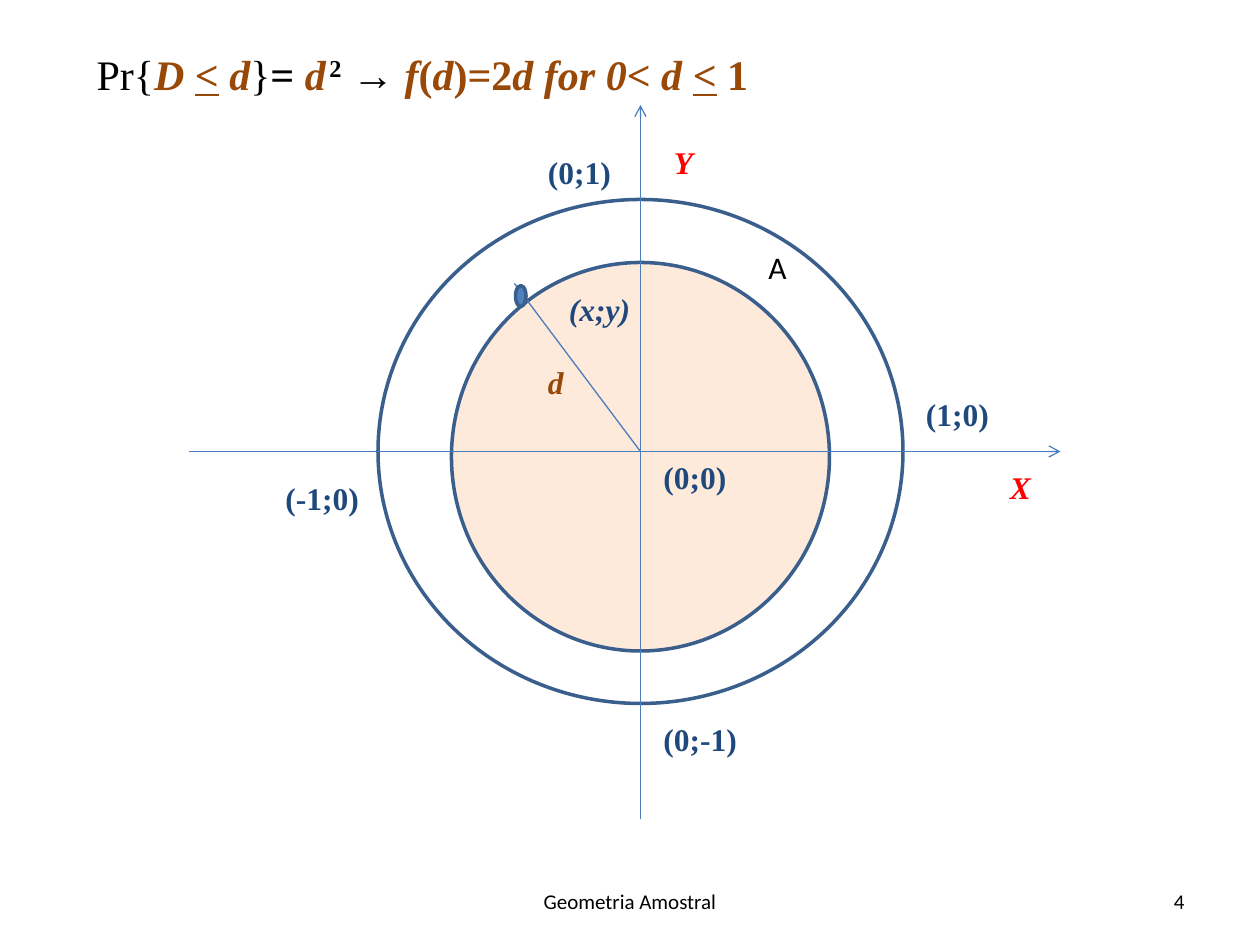
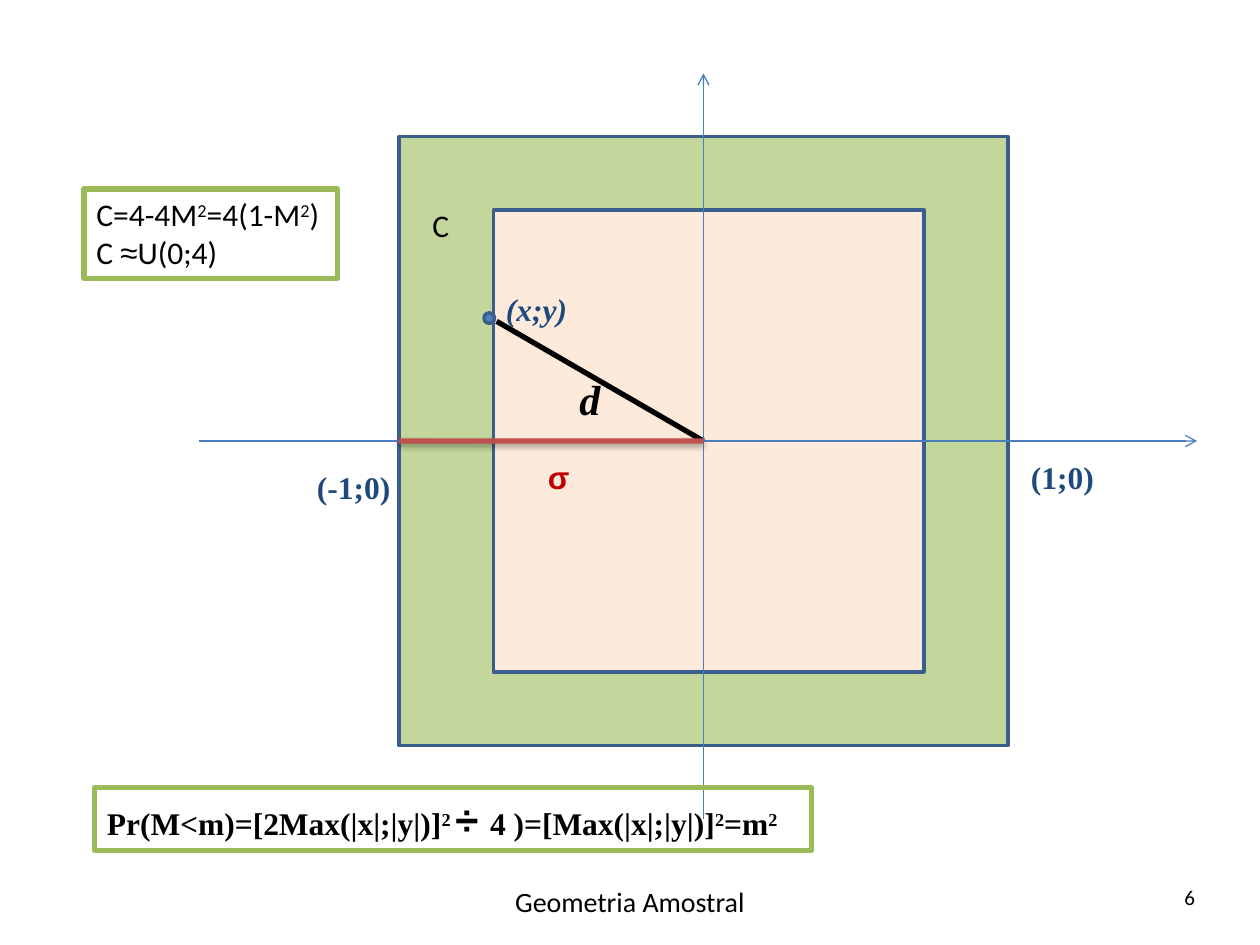
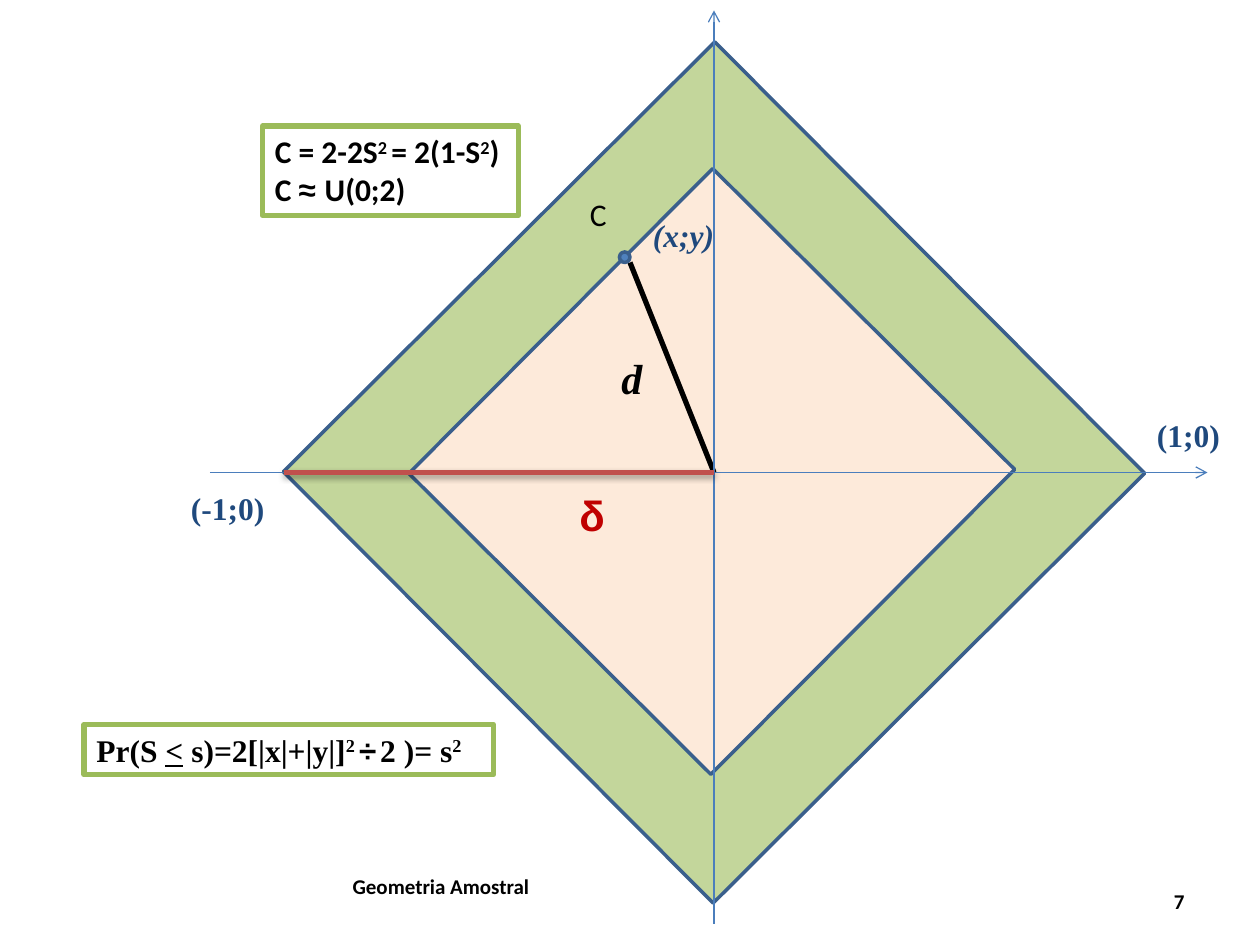
"""Build three slides on sample geometry: a disc, a square and a diamond."""
from lxml.etree import SubElement
from pptx import Presentation
from pptx.dml.color import RGBColor as RGB
from pptx.enum.shapes import MSO_CONNECTOR as CONNECTOR, MSO_SHAPE as SHAPE
from pptx.enum.text import MSO_ANCHOR as ANCHOR, MSO_AUTO_SIZE as AUTO_SIZE, PP_ALIGN as ALIGN
from pptx.oxml.ns import qn
from pptx.util import Inches, Pt

SERIF, SANS, SYMBOL = "Times New Roman", "Calibri", "Arial"
THEME = {
    "colors": {
        "black": "000000", "navy": "1F497D", "brown": "984807", "red": "FF0000",
        "crimson": "C00000", "peach": "FDEADA", "green": "C3D69B", "dot": "4F81BD",
        "outline": "3A5F8C", "axis": "4B7EBC", "frame": "9BBB59", "segment": "C0504D",
    },
    "styles": {
        "title": {"name": SERIF, "size": 24, "color": "black"},
        "point": {"name": SERIF, "size": 18, "color": "navy", "bold": True},
        "sample": {"name": SERIF, "size": 18, "color": "navy", "bold": True, "italic": True},
        "axis": {"name": SERIF, "size": 18, "color": "red", "bold": True, "italic": True},
        "brown d": {"name": SERIF, "size": 18, "color": "brown", "bold": True, "italic": True},
        "black d": {"name": SERIF, "size": 24, "color": "black", "bold": True, "italic": True},
        "sigma": {"name": SYMBOL, "size": 18, "color": "crimson", "bold": True},
        "delta": {"name": SYMBOL, "size": 24, "color": "crimson", "bold": True},
        "region": {"name": SANS, "size": 18, "color": "black"},
        "strong region": {"name": SANS, "size": 18, "color": "black", "bold": True},
        "formula": {"name": SERIF, "size": 18, "color": "black", "bold": True},
        "footer": {"name": SANS, "size": 12, "color": "black"},
        "large footer": {"name": SANS, "size": 16, "color": "black"},
        "strong footer": {"name": SANS, "size": 12, "color": "black", "bold": True},
    },
    "traits": {
        "bold": {"bold": True}, "italic": {"italic": True}, "under": {"underline": True},
        "brown": {"color": "brown"}, "sup": {"baseline": 30000}, "symbol": {"name": SYMBOL},
        "small": {"size": 8}, "large": {"size": 24},
    },
    "widths": {"hair": 0.75, "edge": 2, "heavy": 3},
}
GRID = 12
LABEL_WIDTH = {1: 0.36, 5: 0.71, 6: 0.79}
FOOTER_TEXT = "Geometria Amostral"

SLIDES = [
    {
        "title": [[
            ("Pr{",), ("D ", "brown", "bold", "italic"), ("<", "brown", "bold", "under"),
            (" ", "bold"), ("d", "brown", "bold", "italic"), ("}",), ("= ", "bold"),
            ("d", "brown", "bold", "italic"), (" ", "small", "bold"), ("2", "bold", "sup"),
            (" → ", "bold"), ("f", "brown", "bold", "italic"), ("(", "brown", "bold"),
            ("d", "brown", "bold", "italic"), (")=2", "brown", "bold"),
            ("d for 0< d ", "brown", "bold", "italic"), ("<", "brown", "bold", "under"),
            (" 1", "brown", "bold"),
        ]],
        "regions": [(SHAPE.OVAL, (43, 25, 36, 37), "peach", 0),
                    (SHAPE.OVAL, (36, 19, 50, 48), None, 0)],
        "axes": [(61, 78, 61, 10), (18, 43, 101, 43)],
        "radius": ((61, 43, 49, 27), "axis", "hair"),
        "marker": (49.1, 27.2, 1, 2),
        "labels": [("Y", 63, 13, "axis"), ("X", 95, 44, "axis"), ("(x;y)", 53, 27, "sample"),
                   ("(0;0)", 62, 43, "point"), ("d", 51, 34, "brown d"),
                   ("(-1;0)", 26, 45, "point"), ("(1;0)", 87, 37, "point"),
                   ("(0;-1)", 62, 68, "point"), ("(0;1)", 51, 14, "point"),
                   ("A", 72, 23, "region")],
        "footer": (41, 83.4, "footer"),
        "number": ("4", 86, 83.4, "footer"),
    },
    {
        "regions": [(SHAPE.RECTANGLE, (38, 13, 58, 58), "green", 0),
                    (SHAPE.RECTANGLE, (47, 20, 41, 44), "peach", 0)],
        "axes": [(19, 42, 114, 42), (67, 78, 67, 7)],
        "radius": ((47.3, 30.6, 67, 42), "black", "heavy"),
        "marker": (46.1, 29.8, 1, 1),
        "labels": [("(x;y)", 47, 27, "sample"), ("d", 54, 35, "black d"),
                   ("(-1;0)", 29, 44, "point"), ("(1;0)", 97, 43, "point"),
                   ("C", 40, 19, "region"), ("σ", 51, 43, "sigma")],
        "formulas": [
            ((9, 75, 5.69, 0.5), "formula", False, [[
                ("Pr(M<m)=[2Max(|x|;|y|)]",), ("2 ", "sup"), ("÷ ", "large", "symbol"),
                ("4 )=[Max(|x|;|y|)]",), ("2", "sup"), ("=m",), ("2", "sup")]]),
            ((8, 18, 2.01, 0.71), "region", False, [
                [("C=4-4M",), ("2", "sup"), ("=4(1-M",), ("2", "sup"), (")",)],
                [("C ",), ("≈", "symbol"), ("U(0;4)",)]]),
        ],
        "footer": (41, 83.4, "large footer"),
        "number": ("6", 87, 83, "footer"),
        "segment": (38, 42, 67, 42),
        "joined": True,
    },
    {
        "regions": [(SHAPE.RECTANGLE, (39, 16, 58, 58), "green", 45.1),
                    (SHAPE.RECTANGLE, (47.3, 24.6, 41, 40.6), "peach", 314.9)],
        "axes": [(20, 45, 115, 45), (68, 88, 68, 1)],
        "radius": ((60, 25, 68, 45), "black", "heavy"),
        "marker": (59, 24, 1, 1),
        "labels": [("(x;y)", 61, 20, "sample"), ("d", 58, 33, "black d"),
                   ("(-1;0)", 17, 46, "point"), ("(1;0)", 109, 39, "point"),
                   ("C", 55, 18, "region"), ("δ", 54, 46, "delta")],
        "formulas": [
            ((8, 69, 3.25, 0.4), "formula", True, [[
                ("Pr(S ",), ("<", "under"), (" s)=2[|x|+|y|]",), ("2", "sup"),
                (" ", "small", "symbol"), ("÷", "symbol"), (" ", "small", "symbol"),
                ("2 )= s",), ("2", "sup")]]),
            ((25, 12, 2.03, 0.71), "strong region", False, [
                [("C = 2-2S",), ("2 ", "sup"), ("= 2(1-S",), ("2", "sup"), (")",)],
                [("C ",), ("≈ ", "symbol"), ("U(0;2)",)]]),
        ],
        "footer": (23, 82, "strong footer"),
        "number": ("7", 86, 83.4, "strong footer"),
        "segment": (27, 45, 68, 45),
    },
]


def color(key):
    """Return a theme colour."""
    return RGB.from_string(THEME["colors"][key])


def cells(*steps):
    """Turn grid steps into lengths."""
    return [Inches(step / GRID) for step in steps]


def stroke(part, color_key, width_key):
    """Format the line of a part."""
    part.line.color.rgb = color(color_key)
    part.line.width = Pt(THEME["widths"][width_key])


def write(box, paragraphs, style, align=ALIGN.LEFT, **frame_format):
    """Fill a box with paragraphs of (text, *traits) runs."""
    frame = box.text_frame
    settings = {"word_wrap": False, "auto_size": AUTO_SIZE.SHAPE_TO_FIT_TEXT,
                "vertical_anchor": ANCHOR.TOP} | frame_format
    for name, value in settings.items():
        setattr(frame, name, value)
    for index, runs in enumerate(paragraphs):
        paragraph = frame.add_paragraph() if index else frame.paragraphs[0]
        paragraph.alignment = align
        for text, *traits in runs:
            run = paragraph.add_run()
            run.text = text
            values = dict(THEME["styles"][style])
            for trait in traits:
                values |= THEME["traits"][trait]
            run.font.color.rgb = color(values.pop("color"))
            run.font.size = Pt(values.pop("size"))
            if "baseline" in values:
                run.font._element.set("baseline", str(values.pop("baseline")))
            for name, value in values.items():
                setattr(run.font, name, value)


def add_text(slide, left, top, width, height, paragraphs, style, **options):
    """Place a text box at a grid point with a size in inches."""
    box = slide.shapes.add_textbox(*cells(left, top), Inches(width), Inches(height))
    write(box, paragraphs, style, **options)
    return box


def add_region(slide, preset, place, fill, turn=0):
    """Draw an outlined region."""
    region = slide.shapes.add_shape(preset, *cells(*place))
    region.shadow.inherit = False
    region.rotation = turn
    if fill:
        region.fill.solid()
        region.fill.fore_color.rgb = color(fill)
    else:
        region.fill.background()
    stroke(region, "outline", "edge")
    return region


def add_line(slide, ends, color_key, width_key, arrow=False, shadow=False):
    """Draw a straight line, with an arrowhead or a soft shadow on request."""
    line = slide.shapes.add_connector(CONNECTOR.STRAIGHT, *cells(*ends))
    stroke(line, color_key, width_key)
    properties = line._element.spPr
    if arrow:
        SubElement(properties.find(qn("a:ln")), qn("a:tailEnd"), type="arrow")
    effects = SubElement(properties, qn("a:effectLst"))
    if shadow:
        outer = SubElement(effects, qn("a:outerShdw"), blurRad="40000", dist="23000",
                           dir="5400000", rotWithShape="0")
        tint = SubElement(outer, qn("a:srgbClr"), val=THEME["colors"]["black"])
        SubElement(tint, qn("a:alpha"), val="35000")
    return line


def add_footer(slide, text, left, top, columns, style, align):
    """Place a footer text centred in its row."""
    add_text(slide, left, top, columns / GRID, 0.4, [[(text,)]], style, align=align,
             word_wrap=True, auto_size=AUTO_SIZE.NONE, vertical_anchor=ANCHOR.MIDDLE)


def build_slide(deck, content):
    """Build one diagram slide."""
    slide = deck.slides.add_slide(deck.slide_layouts[5 if "title" in content else 6])
    if "title" in content:
        title = slide.shapes.title
        title.left, title.top = cells(8, 4)
        title.width, title.height = Inches(5.43), Inches(0.5)
        write(title, content["title"], "title")
    regions = [add_region(slide, *region) for region in content["regions"]]
    add_line(slide, *content["radius"])
    for axis in content["axes"]:
        add_line(slide, axis, "axis", "hair", arrow=True)
    add_region(slide, SHAPE.OVAL, content["marker"], "dot")
    for text, left, top, style in content["labels"]:
        height = 0.5 if THEME["styles"][style]["size"] == 24 else 0.4
        add_text(slide, left, top, LABEL_WIDTH[len(text)], height, [[(text,)]], style)
    for place, style, wrap, paragraphs in content.get("formulas", []):
        stroke(add_text(slide, *place, paragraphs, style, word_wrap=wrap), "frame", "heavy")
    left, top, style = content["footer"]
    add_footer(slide, FOOTER_TEXT, left, top, 38, style, ALIGN.CENTER)
    number, left, top, style = content["number"]
    add_footer(slide, number, left, top, 28, style, ALIGN.RIGHT)
    if "segment" in content:
        segment = add_line(slide, content["segment"], "segment", "heavy", shadow=True)
        if content.get("joined"):
            segment.begin_connect(regions[0], 1)


def main():
    """Build and save the deck."""
    deck = Presentation()
    deck.slide_width, deck.slide_height = Inches(10), Inches(7.5)
    for content in SLIDES:
        build_slide(deck, content)
    deck.save("out.pptx")


if __name__ == "__main__":
    main()
